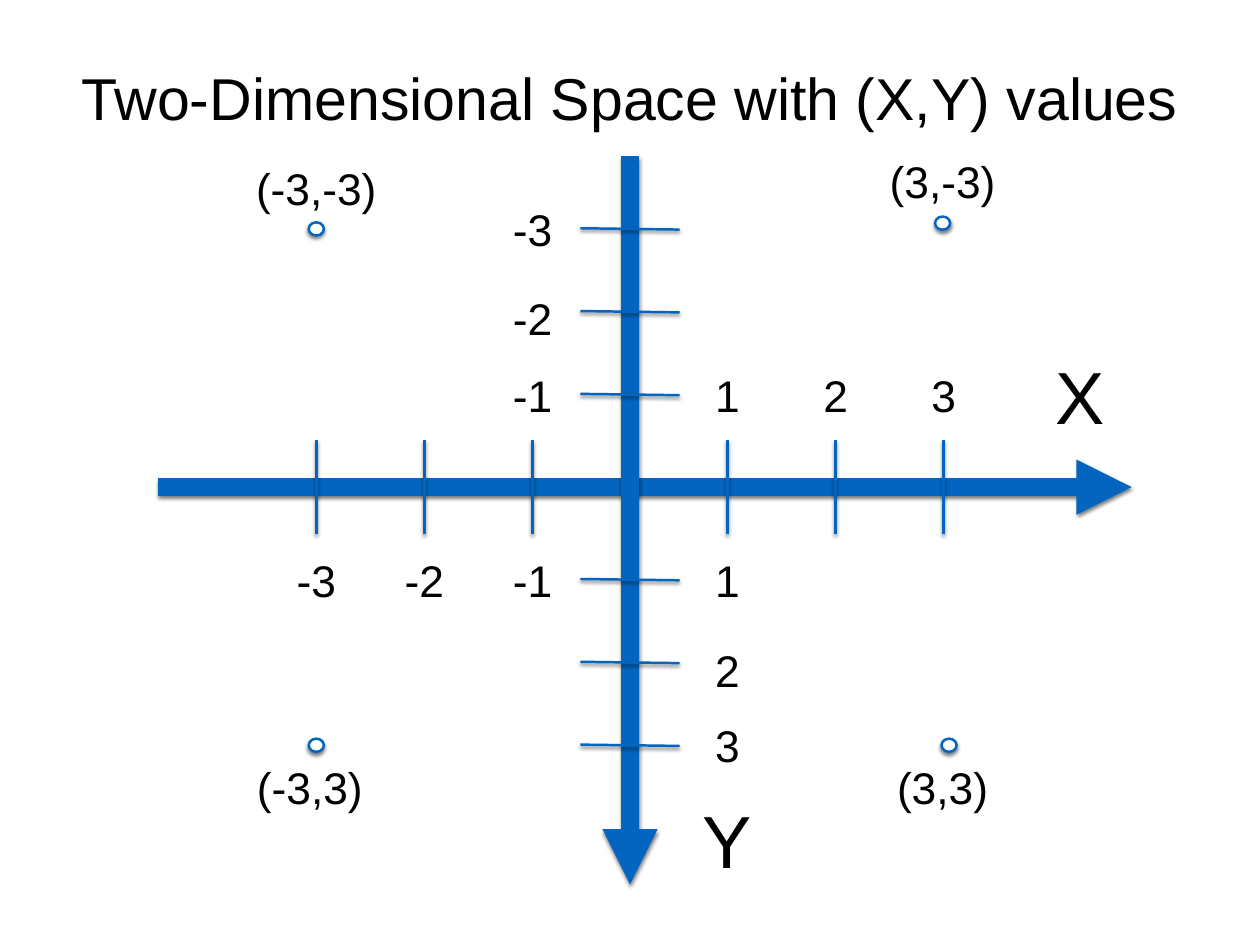
from math import copysign

from lxml.etree import SubElement
from pptx import Presentation
from pptx.dml.color import RGBColor
from pptx.enum.shapes import MSO_CONNECTOR as Connector, MSO_SHAPE as Shape
from pptx.enum.text import MSO_ANCHOR as Anchor, MSO_AUTO_SIZE as AutoSize, PP_ALIGN as Align
from pptx.oxml.ns import qn
from pptx.util import Inches, Pt

COLORS = {"axis": "0365C0", "text": "000000", "point": "FFFFFF", "shadow": "000000"}
FONT = "Arial"
WIDTH, HEIGHT = 14.22, 10.67


class Plane:
    """Draws on a page whose columns and rows are the X and Y values.

    Columns and rows are counted from the origin; sizes are percent of the slide.
    """

    origin = (7.11, 5.5)
    step = (1.22, 0.935)
    gap = (-0.12, 0.11)  # extra distance between the origin and the first tick

    def __init__(self, page):
        self.page = page

    def place(self, value, axis):
        if value == 0:
            return self.origin[axis]
        distance = abs(value) * self.step[axis] + self.gap[axis]
        return self.origin[axis] + copysign(distance, value)

    def spot(self, column, row):
        return self.place(column, 0), self.place(row, 1)

    def size(self, width, height):
        return WIDTH * width / 100, HEIGHT * height / 100

    def frame(self, column, row, width, height):
        x, y = self.spot(column, row)
        w, h = self.size(width, height)
        return [Inches(length) for length in (x - w / 2, y - h / 2, w, h)]

    def color(self, name):
        return RGBColor.from_string(COLORS[name])

    def outline(self, item, weight):
        item.line.width = Pt(weight)
        item.line.fill.solid()
        item.line.fill.fore_color.rgb = self.color("axis")

    def shade(self, item):
        effects = SubElement(item._element.spPr, qn("a:effectLst"))
        shadow = SubElement(effects, qn("a:outerShdw"), blurRad=str(Pt(3)), dist=str(Pt(2)),
                            dir="5400000", rotWithShape="0")
        tint = SubElement(shadow, qn("a:srgbClr"), val=COLORS["shadow"])
        SubElement(tint, qn("a:alpha"), val="50000")

    def line(self, start, end, weight, arrow=False):
        ends = [Inches(length) for length in (*start, *end)]
        connector = self.page.shapes.add_connector(Connector.STRAIGHT, *ends)
        self.outline(connector, weight)
        if arrow:
            stroke = connector._element.spPr.find(qn("a:ln"))
            SubElement(stroke, qn("a:tailEnd"), type="triangle")
        self.shade(connector)

    def axis(self, start, end):
        self.line(self.spot(*start), self.spot(*end), 15, arrow=True)

    def tick(self, column, row, reach_x, reach_y):
        x, y = self.spot(column, row)
        dx, dy = self.size(reach_x, reach_y)
        self.line((x - dx, y - dy), (x + dx, y + dy), 2)

    def point(self, column, row):
        dot = self.page.shapes.add_shape(Shape.OVAL, *self.frame(column, row, 1.2, 1.4))
        dot.fill.solid()
        dot.fill.fore_color.rgb = self.color("point")
        self.outline(dot, 2)
        self.shade(dot)

    def add_text(self, box, text, size):
        frame = box.text_frame
        frame.vertical_anchor = Anchor.MIDDLE
        frame.margin_left = frame.margin_right = Inches(0.06)
        frame.margin_top = frame.margin_bottom = Inches(0.06)
        para = frame.paragraphs[0]
        para.alignment = Align.CENTER
        run = para.add_run()
        run.text = text
        run.font.name = FONT
        run.font.size = Pt(size)
        run.font.color.rgb = self.color("text")

    def label(self, text, column, row, width, height=6.65, size=36):
        box = self.page.shapes.add_textbox(*self.frame(column, row, width, height))
        box.text_frame.word_wrap = False
        box.text_frame.auto_size = AutoSize.SHAPE_TO_FIT_TEXT
        self.add_text(box, text, size)

    def title(self, text):
        box = self.page.shapes.title
        left, top = self.size(3, 6)
        width, height = self.size(94, 8.6)
        box.left, box.top = Inches(left), Inches(top)
        box.width, box.height = Inches(width), Inches(height)
        box.text_frame.word_wrap = True
        self.add_text(box, text, 48)


def main():
    deck = Presentation()
    deck.slide_width, deck.slide_height = Inches(WIDTH), Inches(HEIGHT)
    plane = Plane(deck.slides.add_slide(deck.slide_layouts[5]))
    plane.title("Two-Dimensional Space with (X,Y) values")

    # Axes and their names
    plane.axis((-4.46, 0), (4.74, 0))
    plane.axis((0, -3.88), (0, 4.68))
    plane.label("X", 4.26, -1, 4.8, 10.4, 60)
    plane.label("Y", 1, 4.13, 4.8, 10.4, 60)

    # Ticks and numbers; the labels of Y = ±2 sit slightly below their ticks
    label_rows = {-3: -3, -2: -1.93, -1: -1, 1: 1, 2: 2.09, 3: 3}
    for value, label_row in label_rows.items():
        side = 1 if value > 0 else -1
        width = 2.8 if value > 0 else 4
        plane.tick(value, 0, 0, 4.97)
        plane.tick(0, value, 3.94, 0.07)
        plane.label(str(value), value, -side, width)
        plane.label(str(value), side, label_row, width)

    # Points with their coordinates: point place, label place, label width
    points = {
        "(-3,-3)": ((-3, -3), (-3, -3.5), 10.5),
        "(3,-3)": ((2.99, -3.07), (2.99, -3.58), 9.3),
        "(-3,3)": ((-3, 3), (-3.06, 3.5), 9.3),
        "(3,3)": ((3.05, 3), (2.99, 3.5), 8.1),
    }
    for text, (point_place, label_place, width) in points.items():
        plane.point(*point_place)
        plane.label(text, *label_place, width)

    deck.save("out.pptx")


if __name__ == "__main__":
    main()
